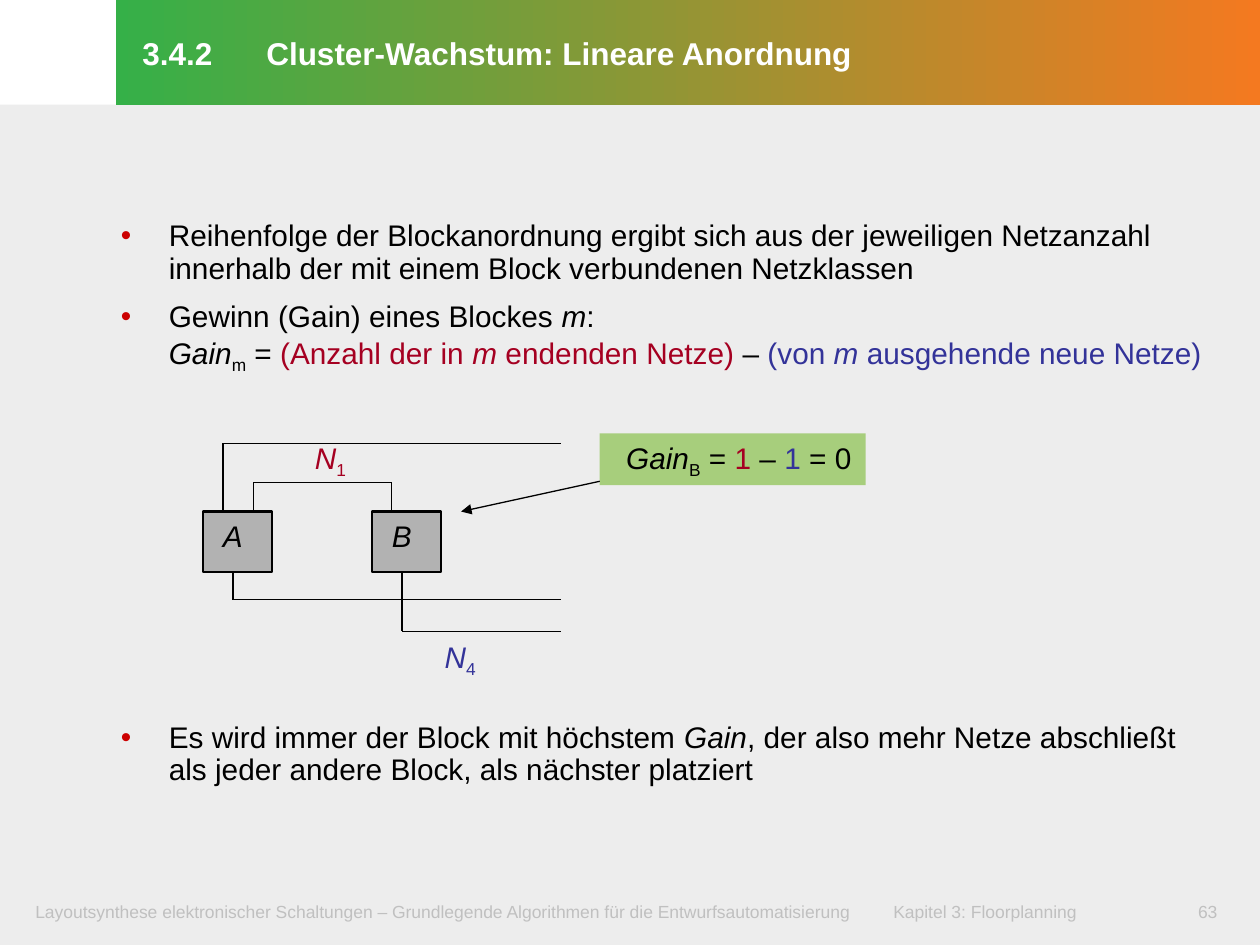
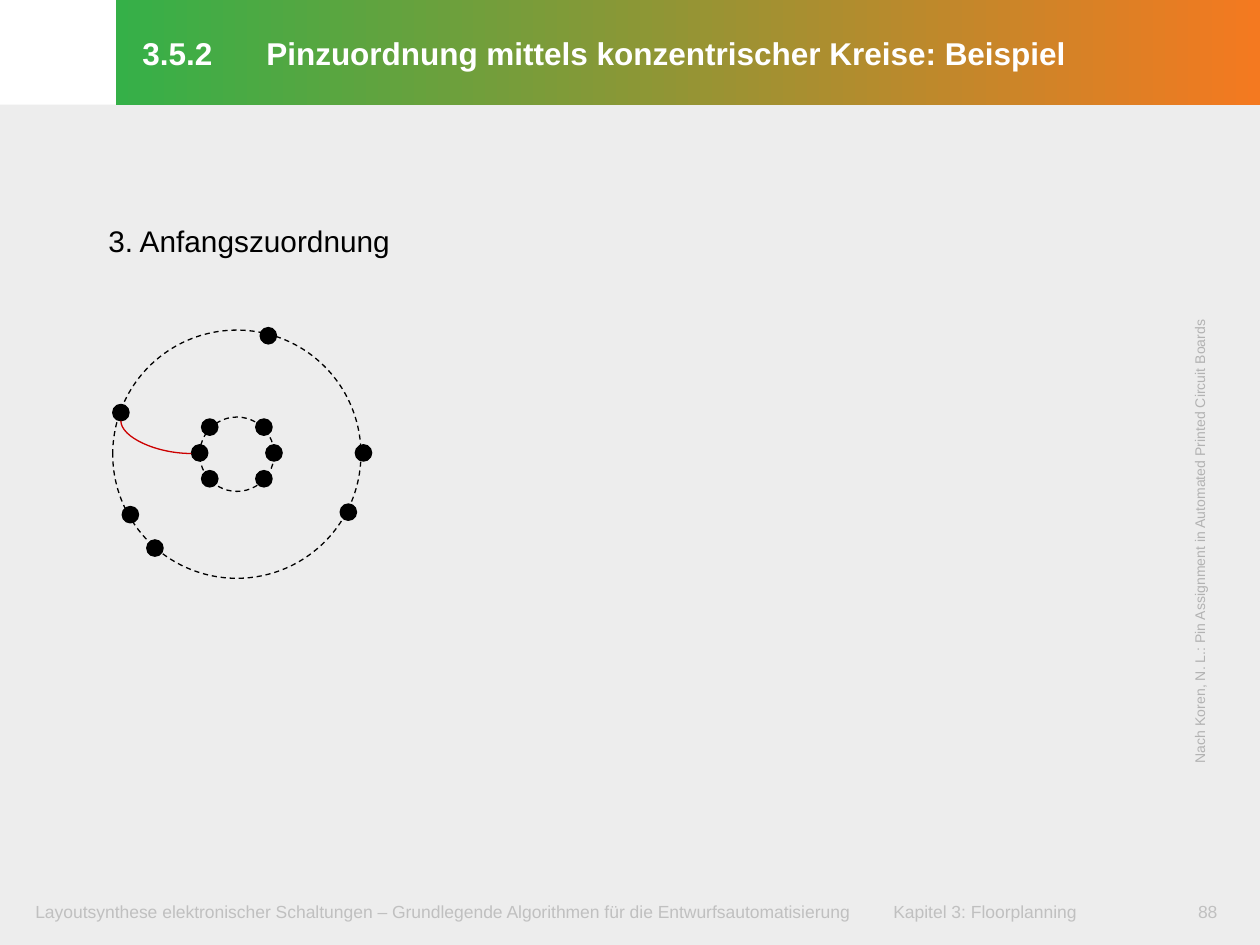
from copy import deepcopy
from itertools import pairwise, product

from lxml.etree import SubElement
from pptx import Presentation
from pptx.dml.color import RGBColor
from pptx.enum.dml import MSO_LINE
from pptx.enum.shapes import MSO_CONNECTOR as LINK, MSO_SHAPE as SHAPE
from pptx.enum.text import MSO_ANCHOR as ANCHOR, MSO_AUTO_SIZE as FIT, PP_ALIGN as ALIGN
from pptx.oxml.ns import qn
from pptx.util import Inches, Pt

COLORS = {
    "black": "000000", "white": "FFFFFF", "paper": "EDEDED", "block": "B2B2B2",
    "footer": "C0C0C0", "green": "35B048", "orange": "F47920", "callout": "A7CE7C",
    "red": "A50021", "blue": "333399", "bullet": "CC0000",
}
FONT = "Arial"
COLS, ROWS = 100, 75  # grid of the slide
WIDTH, HEIGHT = Inches(10), Inches(7.5)
TEXT_SIZE = 17
FOOTER = ("Layoutsynthese elektronischer Schaltungen – Grundlegende Algorithmen "
          "für die Entwurfsautomatisierung\tKapitel 3: Floorplanning")


def rgb(name):
    return RGBColor.from_string(COLORS[name])


def cells(*values):
    """Turn alternating columns and rows into lengths."""
    return [round(value * (HEIGHT / ROWS if i % 2 else WIDTH / COLS))
            for i, value in enumerate(values)]


class Deck:
    def __init__(self):
        self.prs = Presentation()
        self.prs.slide_width, self.prs.slide_height = WIDTH, HEIGHT
        self.slide = None

    def new_slide(self, layout, title, number):
        self.slide = self.prs.slides.add_slide(self.prs.slide_layouts[layout])
        self.heading(title)
        # Grey page area lies behind everything
        page = self.shape(SHAPE.RECTANGLE, (0, 8.3, 100, 66.7), "paper")
        self.slide.shapes._spTree.insert(2, page._element)
        # Footer
        inset = (1.2, 0.6, 1.2, 0.6)
        footer = self.text((1.6, 70.9, 90.9, 3.2), [(FOOTER, "footer")], 10, inset)
        self.tab(footer.text_frame.paragraphs[0], 68.1)
        page_number = self.text((92.9, 70.9, 5.9, 3.2), [(number, "footer")], 10, inset)
        page_number.text_frame.paragraphs[0].alignment = ALIGN.CENTER

    def place(self, box, area):
        box.left, box.top, box.width, box.height = cells(*area)

    def frame(self, box, inset, anchor=ANCHOR.TOP):
        frame = box.text_frame
        frame.word_wrap, frame.auto_size = True, FIT.NONE
        frame.vertical_anchor = anchor
        (frame.margin_left, frame.margin_top,
         frame.margin_right, frame.margin_bottom) = cells(*inset)
        return frame

    def tab(self, paragraph, column):
        stops = SubElement(paragraph._p.get_or_add_pPr(), qn("a:tabLst"))
        SubElement(stops, qn("a:tab"), pos=str(cells(column)[0]), algn="l")

    def fill_in(self, paragraph, parts, size=TEXT_SIZE):
        """Parts are (words, look); a look holds a colour, italic, sub or bold."""
        paragraph.alignment = ALIGN.LEFT
        for words, look in parts:
            if words == "\n":
                paragraph.add_line_break()
                continue
            run, marks = paragraph.add_run(), look.split()
            run.text = words
            run.font.name, run.font.size = FONT, Pt(size)
            run.font.italic, run.font.bold = "italic" in marks, "bold" in marks
            color = next((mark for mark in marks if mark in COLORS), "black")
            run.font.color.rgb = rgb(color)
            if "sub" in marks:
                run._r.get_or_add_rPr().set("baseline", "-25000")
        for line_break in paragraph._p.findall(qn("a:br")):
            line_break.append(deepcopy(paragraph.runs[0]._r.rPr))

    def heading(self, title):
        band = self.slide.shapes.title
        self.place(band, (9.2, 0, 90.8, 8.3))
        band.fill.gradient()
        band.fill.gradient_angle = 0
        for stop, color, position in zip(band.fill.gradient_stops, ("green", "orange"), (0, 1)):
            stop.color.rgb, stop.position = rgb(color), position
        frame = self.frame(band, (2.1, 0.5, 1, 0.7), ANCHOR.MIDDLE)
        paragraph = frame.paragraphs[0]
        self.tab(paragraph, 9.84)
        paragraph.line_spacing = Pt(23.5)
        self.fill_in(paragraph, [(title, "white bold")], 18)

    def bullets(self, area, items):
        """Items are (space before in points, parts)."""
        body = self.slide.placeholders[1]
        self.place(body, area)
        frame = self.frame(body, (2.1, 0.5, 1, 0.5))
        indent = cells(3.8)[0]
        for i, (space, parts) in enumerate(items):
            paragraph = frame.add_paragraph() if i else frame.paragraphs[0]
            props = paragraph._p.get_or_add_pPr()
            props.set("marL", str(indent))
            props.set("indent", str(-indent))
            tint = SubElement(props, qn("a:buClr"))
            SubElement(tint, qn("a:srgbClr"), val=COLORS["bullet"])
            SubElement(props, qn("a:buFont"), typeface=FONT)
            SubElement(props, qn("a:buChar"), char="•")
            paragraph.line_spacing, paragraph.space_before = 0.92, Pt(space)
            self.fill_in(paragraph, parts)

    def shape(self, kind, area, fill=None, line=None, weight=0.75):
        shape = self.slide.shapes.add_shape(kind, *cells(*area))
        shape.shadow.inherit = False
        if fill:
            shape.fill.solid()
            shape.fill.fore_color.rgb = rgb(fill)
        else:
            shape.fill.background()
        if line:
            shape.line.color.rgb, shape.line.width = rgb(line), Pt(weight)
        else:
            shape.line.fill.background()
        return shape

    def label(self, box, parts, inset):
        self.fill_in(self.frame(box, inset).paragraphs[0], parts)

    def text(self, area, parts, size=TEXT_SIZE, inset=(1, 0.5, 1, 0.5)):
        box = self.slide.shapes.add_textbox(*cells(*area))
        self.fill_in(self.frame(box, inset).paragraphs[0], parts, size)
        return box

    def line(self, start, end, color="black", kind=LINK.STRAIGHT, arrow=False):
        line = self.slide.shapes.add_connector(kind, *cells(*start, *end))
        line.line.color.rgb, line.line.width = rgb(color), Pt(0.75)
        if arrow:
            SubElement(line.line._get_or_add_ln(), qn("a:tailEnd"), type="triangle")
        SubElement(line._element.spPr, qn("a:effectLst"))
        return line

    def wire(self, *corners):
        for start, end in pairwise(corners):
            self.line(start, end)


def linear_ordering(deck):
    deck.new_slide(1, "3.4.2\tCluster-Wachstum: Lineare Anordnung", "63")
    deck.bullets((7.5, 17, 89.7, 48.8), [
        (0, [("Reihenfolge der Blockanordnung ergibt sich aus der jeweiligen Netzanzahl "
              "innerhalb der mit einem Block verbundenen Netzklassen", "")]),
        (8.75, [("Gewinn (Gain) eines Blockes ", ""), ("m", "italic"), (":", ""), ("\n", ""),
                ("Gain", "italic"), ("m", "sub"), (" = ", ""),
                ("(Anzahl der in ", "red"), ("m", "red italic"), (" endenden Netze)", "red"),
                (" – ", ""), ("(von ", "blue"), ("m", "blue italic"),
                (" ausgehende neue Netze)", "blue")]),
        # The wide gap leaves room for the block diagram
        (200, [("Es wird immer der Block mit höchstem ", ""), ("Gain", "italic"),
               (", der also mehr Netze abschließt als jeder andere Block, "
                "als nächster platziert", "")]),
    ])

    # Blocks
    block_top, block_bottom, nets_end = 40.6, 45.4, 44.5
    for name, left in (("A", 16.1), ("B", 29.5)):
        block = deck.shape(SHAPE.RECTANGLE, (left, block_top, 5.5, 4.8), "block", "black", 1.25)
        deck.label(block, [(name, "italic")], (1.6, 0.5, 0, 0.5))

    # Nets
    deck.wire((20.1, block_top), (20.1, 38.3), (31.1, 38.3), (31.1, block_top))
    deck.wire((17.7, block_top), (17.7, 35.2), (nets_end, 35.2))
    deck.wire((18.5, block_bottom), (18.5, 47.6), (nets_end, 47.6))
    deck.wire((31.9, block_bottom), (31.9, 50.1), (nets_end, 50.1))
    for index, color, left, top in (("1", "red", 24, 34.4), ("4", "blue", 34.3, 50.2)):
        deck.text((left, top, 7, 3.8), [("N", color + " italic"), (index, color + " sub")])

    # Gain of block B
    gain = deck.shape(SHAPE.RECTANGLE, (47.6, 34.4, 21.1, 4.1), "callout")
    deck.label(gain, [("Gain", "italic"), ("B", "sub"), (" = ", ""), ("1", "red"),
                      (" – ", ""), ("1", "blue"), (" = 0", "")], (2.1, 0.5, 0, 0.7))
    deck.line((47.6, 38.2), (36.6, 40.6), arrow=True)


def concentric_circles(deck):
    deck.new_slide(5, "3.5.2\tPinzuordnung mittels konzentrischer Kreise: Beispiel", "88")
    source = deck.text((75.6, 40.7, 39.3, 2.4), [
        ("Nach Koren, N. L.: Pin Assignment in Automated Printed Circuit Boards", "block")], 8)
    source.rotation = 270

    # Circles
    center_x, center_y, dot = 18.8, 36.05, 1.3
    for radius in (9.85, 2.95):
        circle = deck.shape(SHAPE.OVAL, (center_x - radius, center_y - radius,
                                         2 * radius, 2 * radius), line="black")
        circle.line.dash_style = MSO_LINE.DASH

    # Pins
    inner = [(center_x + dx, center_y - 0.1 + dy)
             for dx, dy in [*product((-2.15, 2.15), (-2.05, 2.05)), (-2.95, 0), (2.95, 0)]]
    outer = [(28.85, 35.95), (21.3, 26.65), (27.65, 40.65),
             (12.3, 43.5), (10.35, 40.85), (9.6, 32.75)]
    for x, y in inner + outer:
        deck.shape(SHAPE.FLOWCHART_CONNECTOR, (x - dot / 2, y - dot / 2, dot, dot),
                   "black", "black")

    # First assignment
    assignment = deck.line((15.2, 36), (9.6, 33.4), "bullet", LINK.CURVE)
    assignment._element.spPr.find(qn("a:prstGeom")).set("prst", "curvedConnector2")

    deck.text((6.6, 17.2, 25.4, 4), [("3. Anfangszuordnung", "")], inset=(2, 0.5, 0.9, 0.7))


def main():
    deck = Deck()
    linear_ordering(deck)
    concentric_circles(deck)
    deck.prs.save("out.pptx")


if __name__ == "__main__":
    main()
